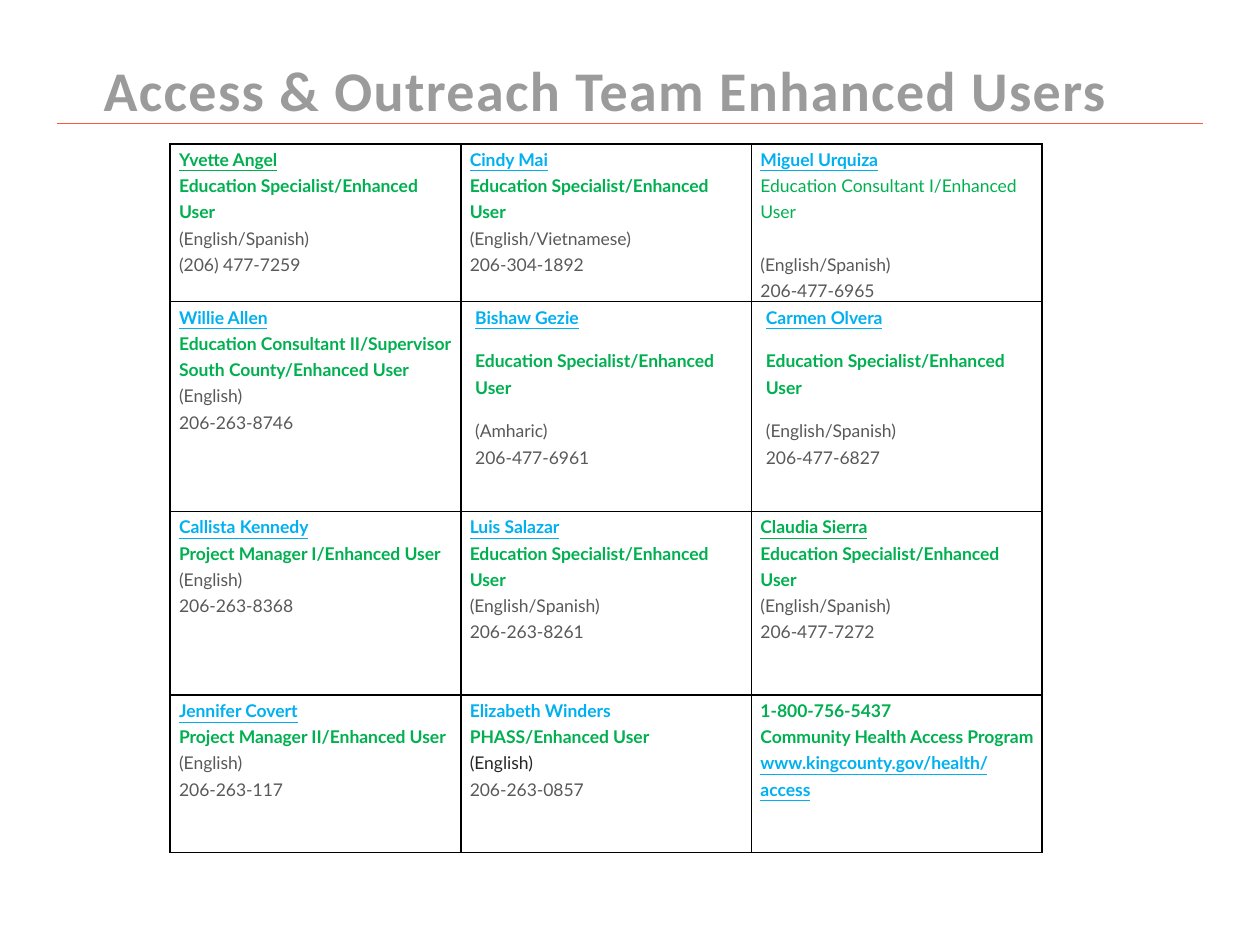
from pptx import Presentation
from pptx.dml.color import RGBColor as RGB
from pptx.enum.shapes import MSO_CONNECTOR as Link
from pptx.enum.text import MSO_ANCHOR as Anchor, PP_ALIGN as Align
from pptx.oxml import parse_xml
from pptx.oxml.ns import nsdecls
from pptx.util import Cm, Pt

GRAY = RGB(0x9B, 0x9B, 0x9B)
CORAL = RGB(0xFF, 0x59, 0x3D)
GREEN = RGB(0x00, 0xB0, 0x50)
BLUE = RGB(0x00, 0xB0, 0xF0)
TEXT = RGB(0x59, 0x59, 0x59)
DARK = RGB(0x26, 0x26, 0x26)
BLACK = RGB(0x00, 0x00, 0x00)

LOOKS = {
    "link": (BLUE, True, True),
    "name": (BLUE, True, False),
    "lead": (GREEN, True, True),
    "role": (GREEN, True, False),
    "thin": (GREEN, False, False),
    "text": (TEXT, False, False),
    "dark": (DARK, False, False),
}
SPEC = "Education Specialist/Enhanced User"
HIGHS = [3.18, 4.23, 3.7, 3.18]


def card(name, role, tongue, phone, looks="link role text text", gaps=(0, 0, 0, 0), pad=0.18):
    """Return the lines, looks, gaps and left pad of one person's cell."""
    return (name, role, tongue, phone), looks.split(), gaps, pad


LOOSE = {"gaps": (0, 10, 10, 0), "pad": 0.29}
LEAD = "lead role text text"
TEAM = [
    [
        card("Yvette Angel", SPEC, "(English/Spanish)", "(206) 477-7259", LEAD),
        card("Cindy Mai", SPEC, "(English/Vietnamese)", "206-304-1892"),
        card("Miguel Urquiza", "Education Consultant I/Enhanced User", "(English/Spanish)",
             "206-477-6965", "link thin text text", (0, 0, 15, 0)),
    ],
    [
        card("Willie Allen", "Education Consultant II/Supervisor South County/Enhanced User",
             "(English)", "206-263-8746"),
        card("Bishaw Gezie", SPEC, "(Amharic)", "206-477-6961", **LOOSE),
        card("Carmen Olvera", SPEC, "(English/Spanish)", "206-477-6827", **LOOSE),
    ],
    [
        card("Callista Kennedy", "Project Manager I/Enhanced User", "(English)", "206-263-8368"),
        card("Luis Salazar", SPEC, "(English/Spanish)", "206-263-8261"),
        card("Claudia Sierra", SPEC, "(English/Spanish)", "206-477-7272", LEAD),
    ],
    [
        card("Jennifer Covert", "Project Manager II/Enhanced User", "(English)", "206-263-117"),
        card("Elizabeth Winders", "PHASS/Enhanced User", "(English)", "206-263-0857",
             "name role dark text"),
        (("1-800-756-5437", "Community Health Access Program",
          "www.kingcounty.gov/health/access"), ("role", "role", "link"), (0, 0, 0), 0.18),
    ],
]


def add_head(slide, left, top, width, height):
    """Place the title and the rule that crosses it inside the box."""
    rule = slide.shapes.add_connector(
        Link.STRAIGHT, Cm(left), Cm(top + 1.22), Cm(left + width), Cm(top + 1.22))
    rule.line.color.rgb = CORAL
    rule.line.width = Pt(1)
    rule._element.spPr.append(parse_xml(f"<a:effectLst {nsdecls('a')}/>"))
    box = slide.shapes.add_textbox(Cm(left), Cm(top), Cm(width - 1), Cm(height))
    frame = box.text_frame
    frame.word_wrap = True
    frame.vertical_anchor = Anchor.TOP
    frame.margin_left = frame.margin_right = frame.margin_top = frame.margin_bottom = 0
    frame.text = "Access & Outreach Team Enhanced Users"
    para = frame.paragraphs[0]
    para.alignment = Align.CENTER
    para.line_spacing = 0.9
    run = para.runs[0]
    run.font.name, run.font.size, run.font.bold = "Calibri", Pt(32), True
    run.font.color.rgb = GRAY
    run._r.get_or_add_rPr().set("spc", "80")


def add_edge(cell):
    """Draw a thin black line on all four sides of the cell."""
    props = cell._tc.get_or_add_tcPr()
    for side in "LRTB":
        props.append(parse_xml(
            f'<a:ln{side} {nsdecls("a")} w="{Pt(1)}"><a:solidFill>'
            f'<a:srgbClr val="{BLACK}"/></a:solidFill></a:ln{side}>'))


def fill_cell(cell, lines, looks, gaps, pad):
    """Write one contact into the cell."""
    cell.margin_left, cell.margin_right = Cm(pad), Cm(0.18)
    cell.margin_top = cell.margin_bottom = 0
    add_edge(cell)
    cell.fill.background()
    cell.text_frame.text = "\n".join(lines)
    for para, look, gap in zip(cell.text_frame.paragraphs, looks, gaps):
        para.line_spacing = Pt(15)
        if gap:
            para.space_before = Pt(gap)
        font = para.runs[0].font
        font.name, font.size = "Lato", Pt(10)
        font.color.rgb, font.bold, font.underline = LOOKS[look]


def add_team(slide, left, top, width):
    """Place the table of contacts with three equal columns."""
    count = len(TEAM[0])
    grid = slide.shapes.add_table(
        len(TEAM), count, Cm(left), Cm(top), Cm(width), Cm(sum(HIGHS))).table
    grid.first_row = grid.horz_banding = False
    for col in grid.columns:
        col.width = Cm(width / count)
    for r, (high, people) in enumerate(zip(HIGHS, TEAM)):
        grid.rows[r].height = Cm(high)
        for c, person in enumerate(people):
            fill_cell(grid.cell(r, c), *person)


def main():
    """Build the slide and save it."""
    deck = Presentation()
    deck.slide_width, deck.slide_height = Cm(25.4), Cm(19.05)
    slide = deck.slides.add_slide(deck.slide_layouts[6])
    add_head(slide, 1.14, 1.27, 23.12, 1.9)
    add_team(slide, 3.43, 2.9, 17.58)
    deck.save("out.pptx")


if __name__ == "__main__":
    main()
